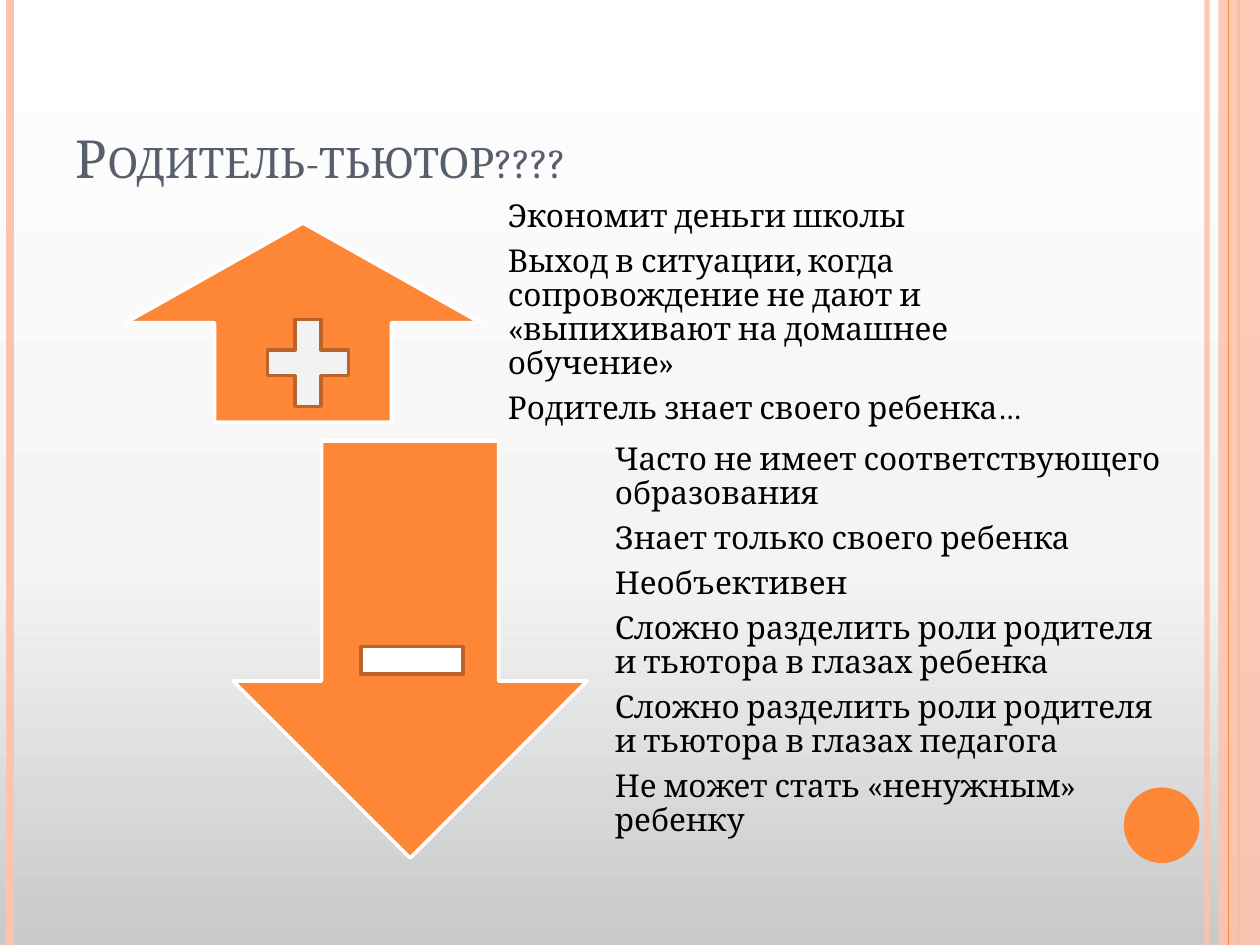
import copy

import pptx
import pptx.dml.color
import pptx.enum.shapes
import pptx.enum.text
import pptx.oxml
import pptx.oxml.ns
import pptx.util

SHAPES = pptx.enum.shapes.MSO_SHAPE
ANCHORS = pptx.enum.text.MSO_ANCHOR
WIDTH, HEIGHT = 10, 7.5
FONT = "Cambria"
ORANGE, PEACH, BROWN, WHITE = "FE8637", "FEC3AE", "BC6329", "FFFFFF"

TITLE = "Родитель-тьютор????"
ADVANTAGES = [
    "Экономит деньги школы",
    "Выход в ситуации, когда сопровождение не дают и «выпихивают на домашнее обучение»",
    "Родитель знает своего ребенка…",
]
DRAWBACKS = [
    "Часто не имеет соответствующего образования",
    "Знает только своего ребенка",
    "Необъективен",
    "Сложно разделить роли родителя и тьютора в глазах ребенка",
    "Сложно разделить роли родителя и тьютора в глазах педагога",
    "Не может стать «ненужным» ребенку",
]
BACKGROUND_STOPS = [(0, "C9C9C9"), (0.4, "F4F4F4"), (1, WHITE)]
STRIPES_BEHIND_BAND = [
    (9.58, PEACH, 3, 93),
    (0.08, PEACH, 4.5, 100),
    (9.83, ORANGE, 1.5, 100),
]
STRIPE_ON_BAND = (9.75, ORANGE, 0.75, 100)
ARROW_WIDTH, TEXT_GAP, TEXT_WIDTH = 2.81, 0.08, 4.76
ARGUMENTS = [
    (SHAPES.UP_ARROW, 1, 1.77, 1.58, ADVANTAGES, 1.36, 2.4),
    (SHAPES.DOWN_ARROW, 1.85, 3.5, 3.31, DRAWBACKS, 3.52, 3.27),
]
SIGNS = [
    (SHAPES.MATH_PLUS, (2.01, 2.41, 0.87, 0.94), "F2F2F2"),
    (SHAPES.MATH_MINUS, (2.72, 4.77, 1.1, 0.94), WHITE),
]


def color(value):
    return pptx.dml.color.RGBColor.from_string(value)


def box(*lengths):
    return [pptx.util.Inches(length) for length in lengths]


def set_alpha(drawing, percent):
    for fill_color in drawing.element.spPr.iter(pptx.oxml.ns.qn("a:srgbClr")):
        alpha = pptx.oxml.parse_xml(f'<a:alpha {pptx.oxml.ns.nsdecls("a")}/>')
        alpha.set("val", str(percent * 1000))
        fill_color.append(alpha)


def paint_background(slide):
    fill = slide.background.fill
    fill.gradient()
    fill.gradient_angle = 90
    first = next(slide.element.iter(pptx.oxml.ns.qn("a:gs")))
    first.addnext(copy.deepcopy(first))
    for stop, (position, value) in zip(fill.gradient_stops, BACKGROUND_STOPS):
        stop.position = position
        stop.color.rgb = color(value)


def add_stripe(slide, x, value, width, opacity):
    stripe = slide.shapes.add_connector(
        pptx.enum.shapes.MSO_CONNECTOR.STRAIGHT, *box(x, 0, x, HEIGHT))
    stripe.line.color.rgb = color(value)
    stripe.line.width = pptx.util.Pt(width)
    if opacity < 100:
        set_alpha(stripe, opacity)
    stripe.element.spPr.append(
        pptx.oxml.parse_xml(f'<a:effectLst {pptx.oxml.ns.nsdecls("a")}/>'))


def add_shape(slide, kind, place, fill, line=None):
    shape = slide.shapes.add_shape(kind, *box(*place))
    shape.shadow.inherit = False
    shape.fill.solid()
    shape.fill.fore_color.rgb = color(fill)
    if line:
        shape.line.color.rgb = color(line)
        shape.line.width = pptx.util.Pt(2)
    else:
        shape.line.fill.background()
    return shape


def write(shape, lines, size=18, value="000000", anchor=ANCHORS.MIDDLE,
          margins=(0.14, 0, 0.14, 0.14), spacing=0.9, after=6.3, small_caps=False):
    frame = shape.text_frame
    frame.word_wrap = True
    frame.auto_size = pptx.enum.text.MSO_AUTO_SIZE.NONE
    frame.vertical_anchor = anchor
    (frame.margin_left, frame.margin_top,
     frame.margin_right, frame.margin_bottom) = box(*margins)
    for index, line in enumerate(lines):
        paragraph = frame.add_paragraph() if index else frame.paragraphs[0]
        paragraph.alignment = pptx.enum.text.PP_ALIGN.LEFT
        paragraph.line_spacing = spacing
        paragraph.space_after = pptx.util.Pt(after)
        run = paragraph.add_run()
        run.text = line
        run.font.name = FONT
        run.font.size = pptx.util.Pt(size)
        run.font.color.rgb = color(value)
        if small_caps:
            run.font._element.set("cap", "small")


def main():
    presentation = pptx.Presentation()
    presentation.slide_width, presentation.slide_height = box(WIDTH, HEIGHT)
    slide = presentation.slides.add_slide(presentation.slide_layouts[5])
    paint_background(slide)

    for stripe in STRIPES_BEHIND_BAND:
        add_stripe(slide, *stripe)
    band = add_shape(slide, SHAPES.RECTANGLE, (9.67, 0, 0.33, HEIGHT), PEACH)
    set_alpha(band, 87)
    add_stripe(slide, *STRIPE_ON_BAND)
    add_shape(slide, SHAPES.OVAL, (8.92, 6.25, 0.6, 0.6), ORANGE)

    title = slide.shapes.title
    title.left, title.top, title.width, title.height = box(0.5, 0.3, 8.17, 1.25)
    write(title, [TITLE], size=30, value="575F6D", anchor=ANCHORS.BOTTOM,
          margins=(0.1, 0.05, 0.1, 0.05), spacing=1, after=0, small_caps=True)

    for kind, left, top, height, lines, text_top, text_height in ARGUMENTS:
        add_shape(slide, kind, (left, top, ARROW_WIDTH, height), ORANGE, WHITE)
        text_left = left + ARROW_WIDTH + TEXT_GAP
        text_box = slide.shapes.add_textbox(
            *box(text_left, text_top, TEXT_WIDTH, text_height))
        write(text_box, lines)

    for kind, place, fill in SIGNS:
        add_shape(slide, kind, place, fill, BROWN)

    presentation.save("out.pptx")


if __name__ == "__main__":
    main()
